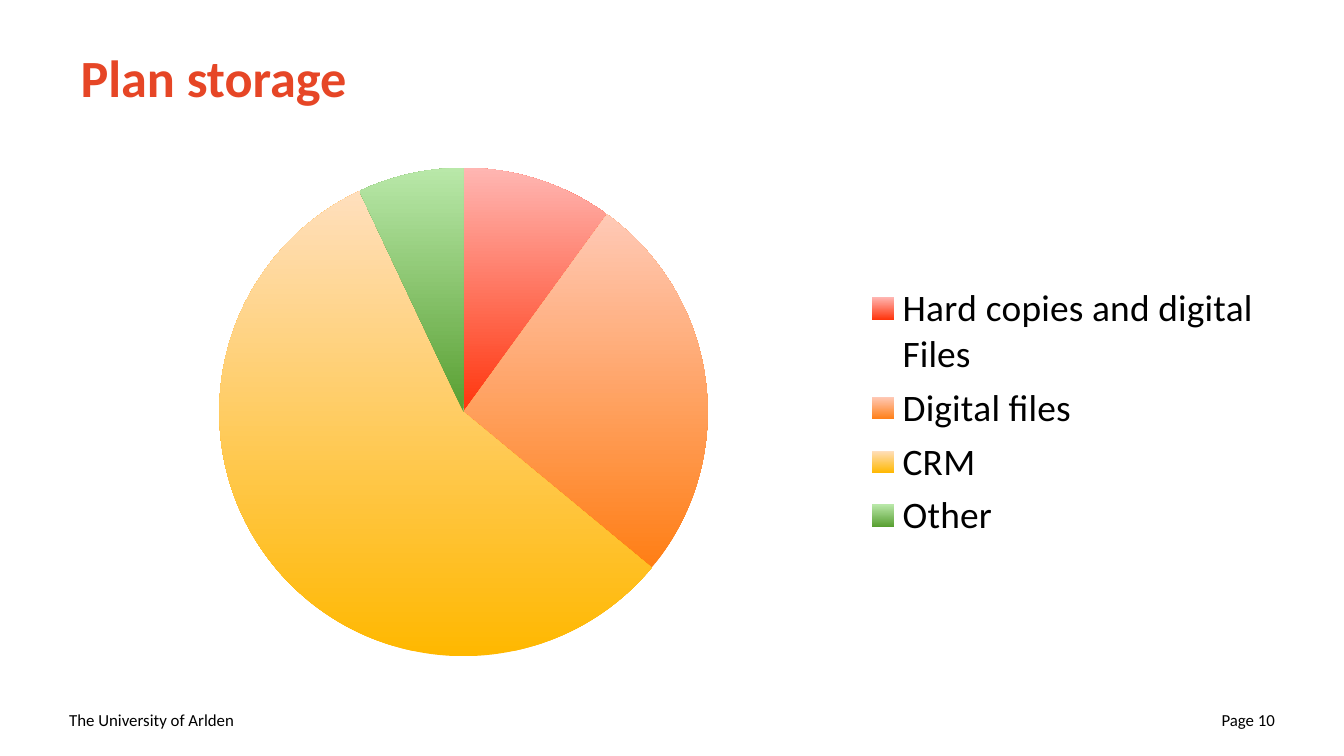
from dataclasses import dataclass

from pptx import Presentation
from pptx.chart.data import CategoryChartData
from pptx.dml.color import RGBColor
from pptx.enum.chart import XL_CHART_TYPE as ChartType, XL_LEGEND_POSITION as LegendPosition
from pptx.enum.text import MSO_ANCHOR as Anchor, PP_ALIGN as Align
from pptx.slide import Slide
from pptx.util import Pt

FONT = "Calibri"
BLACK = "000000"


@dataclass
class Slice:
    label: str
    value: int
    dark: str
    light: str


@dataclass
class Footer:
    text: str
    left: float
    align: Align


SLICES = [
    Slice("Hard copies and digital Files", 10, "FF350D", "FFB6B2"),
    Slice("Digital files", 26, "FF7E15", "FFC9B6"),
    Slice("CRM", 57, "FFB800", "FFDFBD"),
    Slice("Other", 7, "589F31", "B9E8A9"),
]
FOOTERS = [
    Footer("The University of Arlden", 30, Align.LEFT),
    Footer("Page 10", 522, Align.RIGHT),
]


def color(value: str) -> RGBColor:
    return RGBColor.from_string(value)


def style_font(font, size: float, hex_color: str = BLACK, bold: bool = False) -> None:
    font.name = FONT
    font.size = Pt(size)
    font.bold = bold
    font.color.rgb = color(hex_color)


def add_title(slide: Slide, text: str) -> None:
    title = slide.shapes.title
    title.left, title.top, title.width, title.height = Pt(36), Pt(7.2), Pt(648), Pt(67.7)
    title.text_frame.text = text
    title.text_frame.vertical_anchor = Anchor.MIDDLE
    paragraph = title.text_frame.paragraphs[0]
    paragraph.alignment = Align.LEFT
    style_font(paragraph.font, 28, "E64626", bold=True)


def add_footer(slide: Slide, footer: Footer) -> None:
    shape = slide.shapes.add_textbox(Pt(footer.left), Pt(375), Pt(168), Pt(21.6))
    frame = shape.text_frame
    frame.word_wrap = True
    frame.vertical_anchor = Anchor.MIDDLE
    frame.text = footer.text
    paragraph = frame.paragraphs[0]
    paragraph.alignment = footer.align
    style_font(paragraph.font, 9)


def add_pie(slide: Slide, slices: list[Slice]) -> None:
    data = CategoryChartData()
    data.categories = [item.label for item in slices]
    data.add_series("Series 1", [item.value for item in slices])
    chart = slide.shapes.add_chart(
        ChartType.PIE, Pt(36), Pt(80), Pt(648), Pt(281.5), data
    ).chart
    chart.has_title = False
    style_font(chart.font, 10)
    chart.has_legend = True
    chart.legend.position = LegendPosition.RIGHT
    chart.legend.include_in_layout = False
    style_font(chart.legend.font, 20)
    plot = chart.plots[0]
    plot.vary_by_categories = True
    for index, item in enumerate(slices):
        point_format = plot.series[0].points[index].format
        point_format.line.fill.background()
        fill = point_format.fill
        fill.gradient()
        fill.gradient_angle = 90
        for stop, shade in zip(fill.gradient_stops, (item.dark, item.light)):
            stop.color.rgb = color(shade)


def main() -> None:
    """Build the plan storage slide with its pie chart."""
    presentation = Presentation()
    presentation.slide_width, presentation.slide_height = Pt(720), Pt(405)
    slide = presentation.slides.add_slide(presentation.slide_layouts[5])
    for footer in FOOTERS:
        add_footer(slide, footer)
    add_title(slide, "Plan storage")
    add_pie(slide, SLICES)
    presentation.save("out.pptx")


if __name__ == "__main__":
    main()
